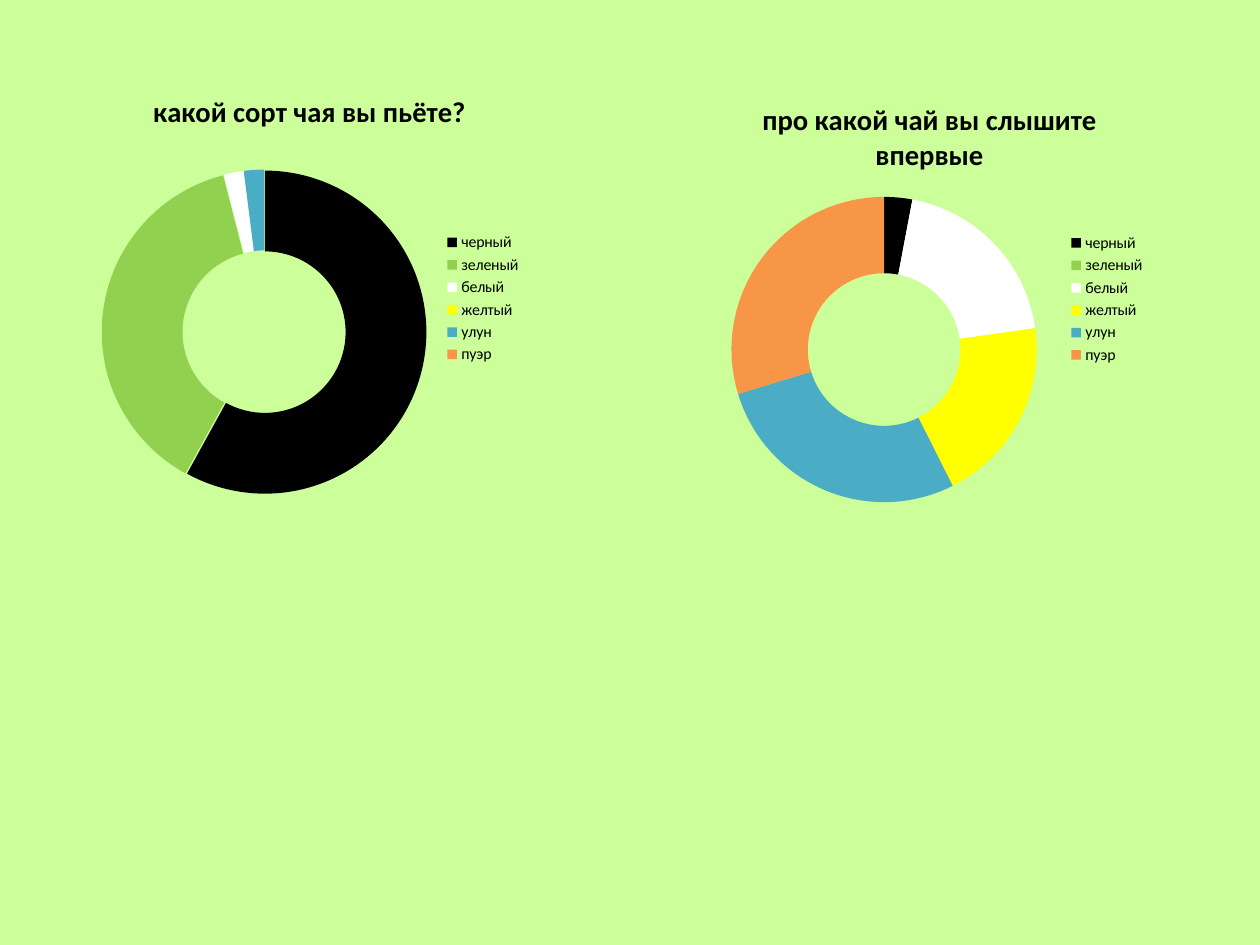
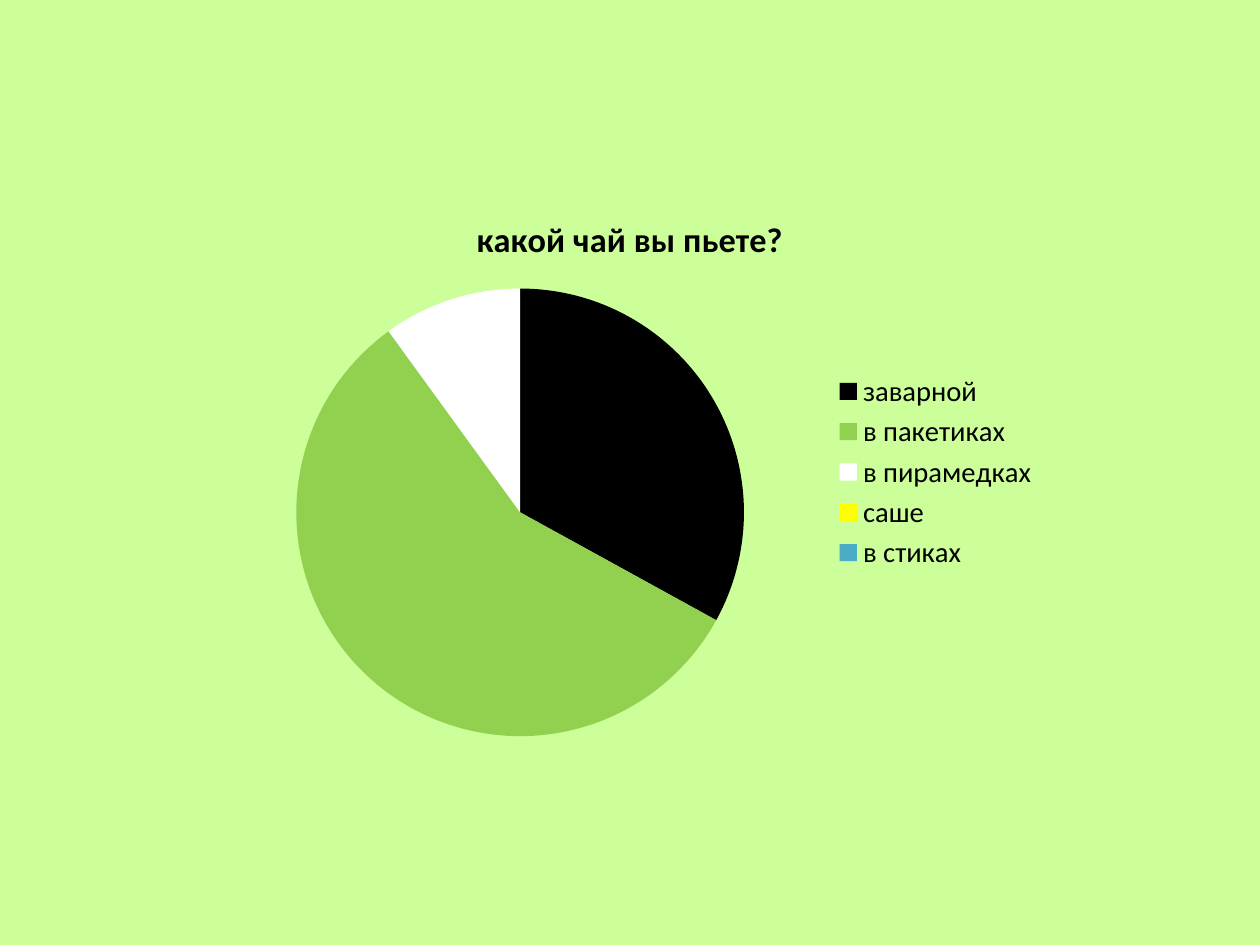
from lxml.etree import Element
from pptx import Presentation
from pptx.chart.data import CategoryChartData
from pptx.dml.color import RGBColor
from pptx.enum.chart import XL_CHART_TYPE, XL_LEGEND_POSITION
from pptx.oxml.ns import qn
from pptx.util import Pt

PX = 8000  # EMU per px
SLIDE_W, SLIDE_H = 1260, 945

BACKGROUND = RGBColor(0xCC, 0xFF, 0x99)
BLACK = RGBColor(0x00, 0x00, 0x00)
GREEN = RGBColor(0x92, 0xD0, 0x50)
WHITE = RGBColor(0xFF, 0xFF, 0xFF)
YELLOW = RGBColor(0xFF, 0xFF, 0x00)
BLUE = RGBColor(0x4B, 0xAC, 0xC6)
ORANGE = RGBColor(0xF7, 0x96, 0x46)
SLICE_COLORS = (BLACK, GREEN, WHITE, YELLOW, BLUE, ORANGE)

FONT = "Calibri"
TEA_SORTS = ("черный", "зеленый", "белый", "желтый", "улун", "пуэр")
TEA_FORMS = ("заварной", "в пакетиках", "в пирамедках", "саше", "в стиках")


def format_font(font, size, bold=False):
    font.name = FONT
    font.size = Pt(size)
    font.bold = bold
    font.color.rgb = BLACK


def set_title(chart, text, **font_format):
    chart.has_title = True
    chart.chart_title.include_in_layout = False
    p = chart.chart_title.text_frame.paragraphs[0]
    r = p.add_run()
    r.text = text
    format_font(r.font, **font_format)


def add_survey_chart(slide, box, kind, question, answers, values,
                     size, title_size, explosion=0):
    """Place one question's round chart, with its legend, in a px box."""
    data = CategoryChartData()
    data.categories = answers
    data.add_series(question, values)
    frame = slide.shapes.add_chart(kind, *(v * PX for v in box), data)
    chart = frame.chart
    format_font(chart.font, size)
    set_title(chart, question, size=title_size, bold=True)

    # Legend
    chart.has_legend = True
    chart.legend.position = XL_LEGEND_POSITION.RIGHT
    chart.legend.include_in_layout = False

    # Slices
    plot = chart.plots[0]
    plot.vary_by_categories = True
    series = plot.series[0]
    for i, color in enumerate(SLICE_COLORS[:len(answers)]):
        fill = series.points[i].format.fill
        fill.solid()
        fill.fore_color.rgb = color
    if explosion:
        gap = Element(qn("c:explosion"), val=str(explosion))
        series._element.find(qn("c:dPt")).addprevious(gap)


def build_sorts_slide(slide):
    style = dict(kind=XL_CHART_TYPE.DOUGHNUT, answers=TEA_SORTS,
                 size=10, title_size=18)
    add_survey_chart(slide, (86, 71, 447, 455),
                     question="какой сорт чая вы пьёте?",
                     values=(58, 38, 2, 0, 2, 0), explosion=1, **style)
    add_survey_chart(slide, (702, 80, 455, 438),
                     question="про какой чай вы слышите впервые",
                     values=(3, None, 20, 20, 28, 30), **style)


def build_forms_slide(slide):
    add_survey_chart(slide, (210, 192, 840, 560), XL_CHART_TYPE.PIE,
                     "какой чай вы пьете?", TEA_FORMS, (33, 57, 10, 0, 0),
                     size=18, title_size=21.6)


def main():
    prs = Presentation()
    prs.slide_width, prs.slide_height = SLIDE_W * PX, SLIDE_H * PX

    # Shared background
    fill = prs.slide_master.background.fill
    fill.solid()
    fill.fore_color.rgb = BACKGROUND

    blank = prs.slide_layouts.get_by_name("Blank")
    for build in (build_sorts_slide, build_forms_slide):
        build(prs.slides.add_slide(blank))
    prs.save("out.pptx")


if __name__ == "__main__":
    main()
